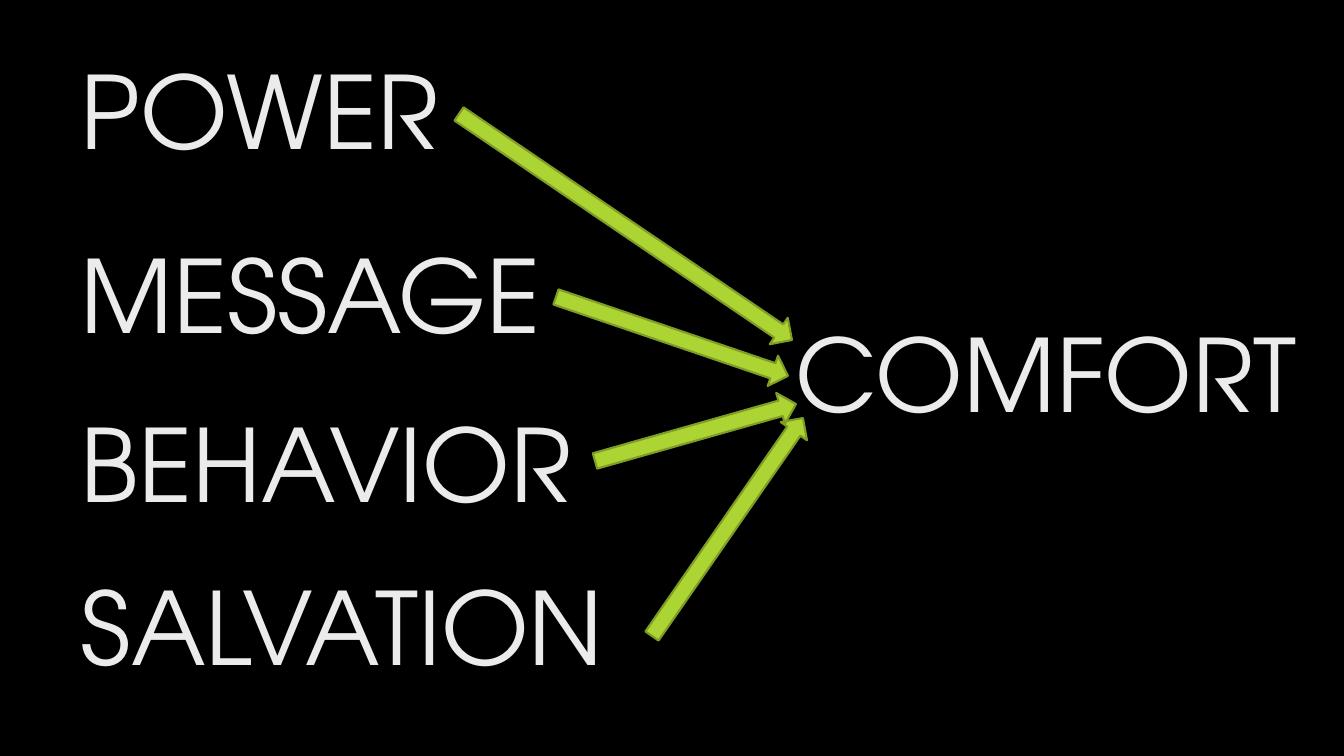
from math import atan2, degrees, hypot

from pptx import Presentation
from pptx.dml.color import RGBColor
from pptx.enum.shapes import MSO_SHAPE
from pptx.enum.text import MSO_ANCHOR
from pptx.util import Emu, Inches, Pt

RIGHT_ARROW = MSO_SHAPE.RIGHT_ARROW
BOTTOM = MSO_ANCHOR.BOTTOM

THEME = {
    "background": RGBColor(0x00, 0x00, 0x00),
    "text": RGBColor(0xEB, 0xEB, 0xEB),
    "arrow": RGBColor(0xAC, 0xD4, 0x33),
    "arrow_edge": RGBColor(0x7F, 0x9D, 0x26),
    "font": "TeX Gyre Adventor",
    "word_size": Pt(72),
    "edge_width": Pt(1.5),
}

# word, left, top, width
WORDS = [
    ("POWER", 71, 56, 380),
    ("MESSAGE", 71, 240, 487),
    ("BEHAVIOR", 71, 409, 540),
    ("SALVATION", 71, 572, 601),
    ("COMFORT", 786, 319, 528),
]
WORD_HEIGHT = 119

# tail and tip of the arrow from each word to COMFORT, back to front
ARROWS = {
    "POWER": ((459, 114), (792, 340)),
    "MESSAGE": ((556, 297), (788, 376)),
    "SALVATION": ((652, 636), (803, 418)),
    "BEHAVIOR": ((595, 461), (796, 404)),
}
ARROW_THICKNESS = 32
PX_PER_INCH = 100.8


def px(length):
    return Emu(round(length * Inches(1) / PX_PER_INCH))


def add_word(slide, word, left, top, width):
    frame = slide.shapes.add_textbox(
        px(left), px(top), px(width), px(WORD_HEIGHT)).text_frame
    frame.word_wrap = True
    frame.vertical_anchor = BOTTOM
    run = frame.paragraphs[0].add_run()
    run.text = word
    run.font.name = THEME["font"]
    run.font.size = THEME["word_size"]
    run.font.color.rgb = THEME["text"]


def add_arrow(slide, tail, tip):
    """Place a block arrow whose centre line runs from tail to tip."""
    run, rise = tip[0] - tail[0], tip[1] - tail[1]
    length = hypot(run, rise)
    left = (tail[0] + tip[0] - length) / 2
    top = (tail[1] + tip[1] - ARROW_THICKNESS) / 2
    arrow = slide.shapes.add_shape(
        RIGHT_ARROW, px(left), px(top), px(length), px(ARROW_THICKNESS))
    arrow.rotation = degrees(atan2(rise, run))
    arrow.shadow.inherit = False
    arrow.fill.solid()
    arrow.fill.fore_color.rgb = THEME["arrow"]
    arrow.line.color.rgb = THEME["arrow_edge"]
    arrow.line.width = THEME["edge_width"]


def main():
    deck = Presentation()
    deck.slide_width, deck.slide_height = px(1344), px(756)
    slide = deck.slides.add_slide(deck.slide_layouts[6])
    slide.background.fill.solid()
    slide.background.fill.fore_color.rgb = THEME["background"]
    for word in WORDS:
        add_word(slide, *word)
    for tail, tip in ARROWS.values():
        add_arrow(slide, tail, tip)
    deck.save("out.pptx")


if __name__ == "__main__":
    main()
